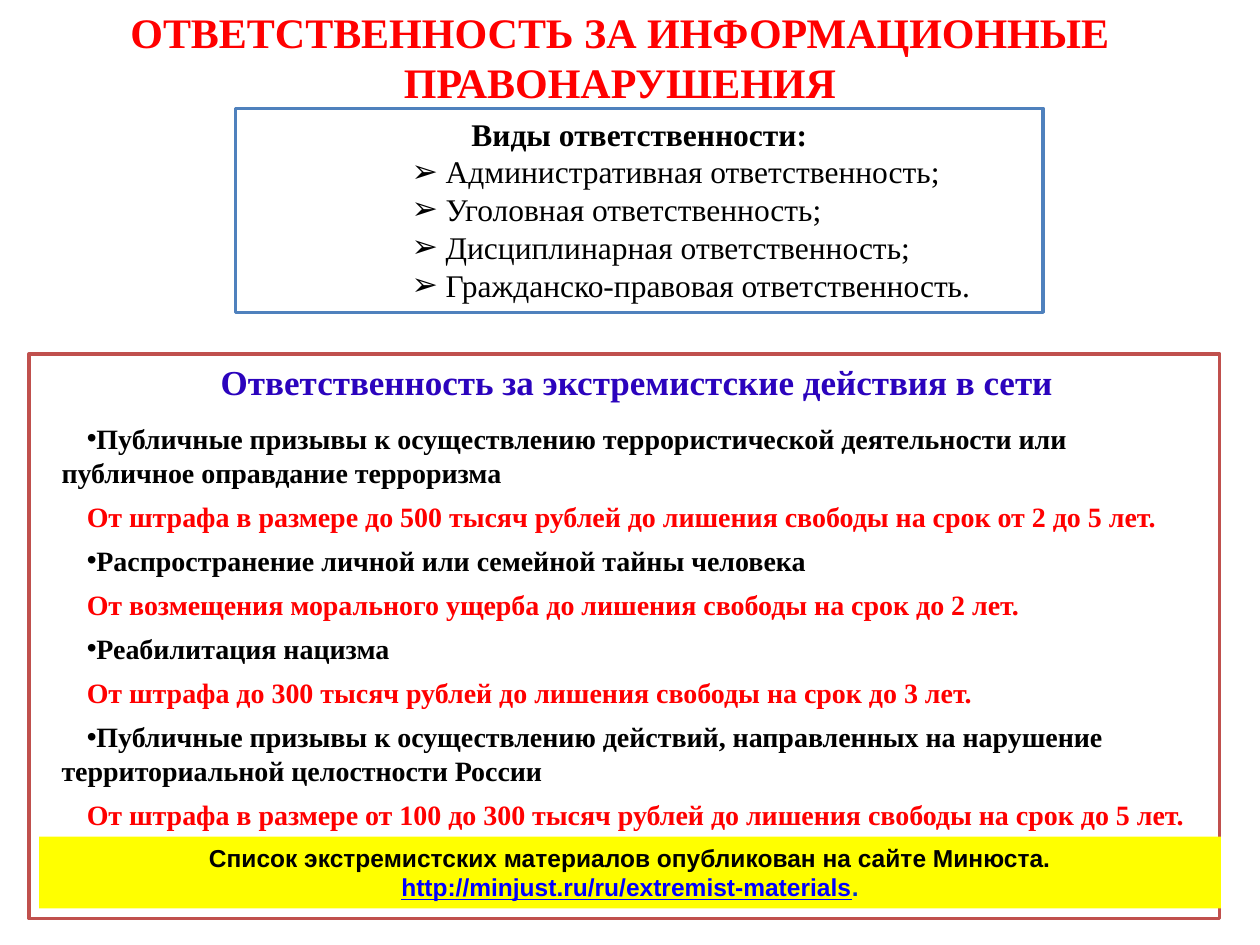
from lxml import etree
from pptx import Presentation
from pptx.dml.color import RGBColor
from pptx.enum.shapes import MSO_SHAPE
from pptx.enum.text import MSO_ANCHOR, PP_ALIGN
from pptx.oxml.ns import qn
from pptx.util import Pt

RECTANGLE = MSO_SHAPE.RECTANGLE
TOP, MIDDLE = MSO_ANCHOR.TOP, MSO_ANCHOR.MIDDLE
LEFT, CENTER = PP_ALIGN.LEFT, PP_ALIGN.CENTER
SERIF, SANS = "Times New Roman", "Arial"
COLORS = {
    "white": "FFFFFF", "black": "000000", "red": "FF0000", "yellow": "FFFF00",
    "blue": "4F81BD", "brick": "C0504D", "violet": "2B03BD",
    "link": "0000FF", "stop": "0033CC",
}
KINDS = [
    "Административная ответственность;",
    "Уголовная ответственность;",
    "Дисциплинарная ответственность;",
    "Гражданско-правовая ответственность.",
]
PENALTIES = [
    ("Публичные призывы к осуществлению террористической деятельности или "
     "публичное оправдание терроризма",
     "От штрафа в размере до 500 тысяч рублей до лишения свободы на срок от 2 до 5 лет."),
    ("Распространение личной или семейной тайны человека",
     "От возмещения морального ущерба до лишения свободы на срок до 2 лет."),
    ("Реабилитация нацизма",
     "От штрафа до 300 тысяч рублей до лишения свободы на срок до 3 лет."),
    ("Публичные призывы к осуществлению действий, направленных на нарушение "
     "территориальной целостности России",
     "От штрафа в размере от 100 до 300 тысяч рублей до лишения свободы на срок до 5 лет."),
]


class SlideBuilder:
    """Holds the style and the current slide and adds elements to it."""

    def __init__(self, page):
        self.page = page
        self.font = {"name": SERIF, "size": Pt(16), "bold": True}

    def color(self, name):
        return RGBColor.from_string(COLORS[name])

    def frame(self, box, anchor):
        for key, value in {"word_wrap": True, "vertical_anchor": anchor}.items():
            setattr(box.text_frame, key, value)
        return box.text_frame

    def text_box(self, left, top, width, height):
        box = self.page.shapes.add_textbox(Pt(left), Pt(top), Pt(width), Pt(height))
        return self.frame(box, TOP)

    def panel(self, left, top, width, height, fill="white", line=None, anchor=TOP):
        box = self.page.shapes.add_shape(
            RECTANGLE, Pt(left), Pt(top), Pt(width), Pt(height))
        box.shadow.inherit = False
        box.fill.solid()
        box.fill.fore_color.rgb = self.color(fill)
        if line:
            box.line.color.rgb = self.color(line)
            box.line.width = Pt(2)
        else:
            box.line.fill.background()
        return self.frame(box, anchor)

    def paragraph(self, frame, spans, align=LEFT, margin=0, indent=0,
                  bullet=None, before=0, **font):
        first = frame.paragraphs[0]
        para = frame.add_paragraph() if first.runs else first
        properties = para._p.get_or_add_pPr()
        properties.set("marL", str(Pt(margin)))
        properties.set("indent", str(Pt(indent)))
        if bullet:
            etree.SubElement(properties, qn("a:buFont")).set("typeface", SANS)
            etree.SubElement(properties, qn("a:buChar")).set("char", bullet)
        para.alignment = align
        para.space_before = Pt(before)
        for text, color, underline in spans:
            span = para.add_run()
            span.text = text
            for key, value in {**self.font, **font, "underline": underline}.items():
                setattr(span.font, key, value)
            span.font.color.rgb = self.color(color)


def main():
    deck = Presentation()
    deck.slide_width, deck.slide_height = Pt(720), Pt(540)
    builder = SlideBuilder(deck.slides.add_slide(deck.slide_layouts[6]))

    title = builder.text_box(22.3, 0, 664, 65.5)
    builder.paragraph(
        title, [("ОТВЕТСТВЕННОСТЬ ЗА ИНФОРМАЦИОННЫЕ ПРАВОНАРУШЕНИЯ", "red", False)],
        CENTER, size=Pt(24))

    kinds = builder.panel(134.6, 61.9, 461.5, 116.6, line="blue")
    builder.paragraph(
        kinds, [("Виды ответственности:", "black", False)], CENTER, size=Pt(18))
    for kind in KINDS:
        builder.paragraph(kinds, [(kind, "black", False)], margin=113, indent=-19.5,
                          bullet="➢", size=Pt(18), bold=False)

    network = builder.panel(16.6, 202.3, 680.4, 322.6, line="brick")
    builder.paragraph(
        network, [("Ответственность за экстремистские действия в сети", "violet", False)],
        CENTER, indent=14.4, size=Pt(20))

    penalties = builder.panel(28.1, 236.2, 658.8, 243.4, anchor=MIDDLE)
    for number, (offence, penalty) in enumerate(PENALTIES):
        builder.paragraph(penalties, [(offence, "black", False)], indent=14.4,
                          bullet="•", before=6 if number else 0)
        builder.paragraph(penalties, [(penalty, "red", False)], indent=14.4, before=6)

    source = builder.panel(22.3, 478.1, 675.4, 41, fill="yellow", anchor=MIDDLE)
    style = {"align": CENTER, "name": SANS, "size": Pt(14)}
    builder.paragraph(
        source,
        [("Список экстремистских материалов опубликован на сайте Минюста.", "black", False)],
        **style)
    builder.paragraph(
        source,
        [("http://minjust.ru/ru/extremist-materials", "link", True), (".", "stop", False)],
        **style)

    deck.save("out.pptx")


if __name__ == "__main__":
    main()
